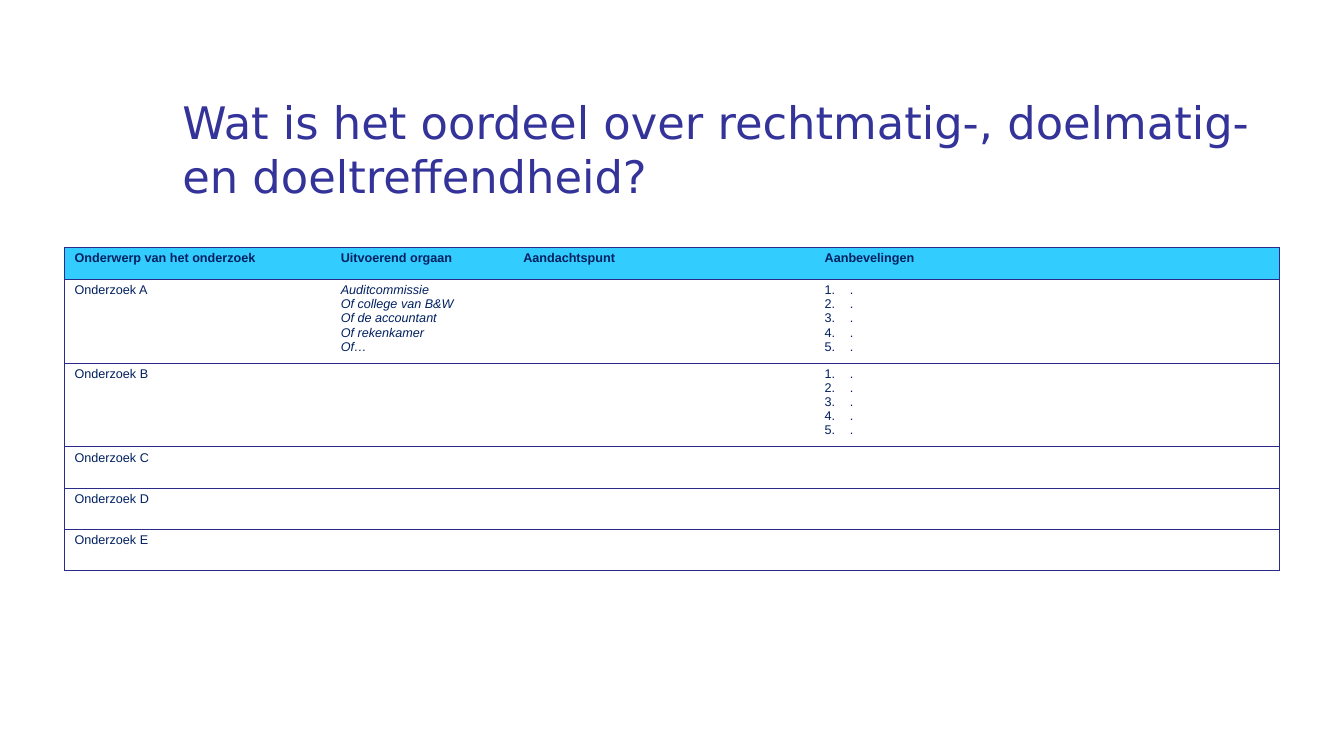
from lxml import etree
from pptx import Presentation
from pptx.dml.color import RGBColor
from pptx.enum import text
from pptx.oxml.ns import qn
from pptx.util import Inches, Pt

# Content
QUESTION = "Wat is het oordeel over rechtmatig-, doelmatig- en doeltreffendheid?"
HEADINGS = ["Onderwerp van het onderzoek", "Uitvoerend orgaan", "Aandachtspunt", "Aanbevelingen"]
BODIES = ["Auditcommissie", "Of college van B&W", "Of de accountant", "Of rekenkamer", "Of…"]
ADVICE = ["."] * 5
STUDIES = [
    (["Onderzoek A"], BODIES, [], ADVICE),
    (["Onderzoek B"], [], [], ADVICE),
    (["Onderzoek C"], [], [], []),
    (["Onderzoek D"], [], [], []),
    (["Onderzoek E"], [], [], []),
]
COLUMN_WIDTHS = [2.64, 1.81, 2.99, 4.51]
COLUMN_WIDTHS[-1] = round(12.05 - sum(COLUMN_WIDTHS[:-1]), 2)
ROW_HEIGHTS = [0.32, 0.8, 0.8] + [0.41] * 3
BODY_COLUMN, ADVICE_COLUMN = 1, 3
COLORS = {"title": "333399", "text": "002060", "header": "33CCFF", "line": "2A2A89"}


def color(name):
    return RGBColor.from_string(COLORS[name])


def set_border(cell, side, visible):
    line = etree.SubElement(cell._tc.get_or_add_tcPr(), qn(f"a:ln{side}"), w=str(Pt(0.75)))
    if visible:
        fill = etree.SubElement(line, qn("a:solidFill"))
        etree.SubElement(fill, qn("a:srgbClr"), val=COLORS["line"])
    else:
        etree.SubElement(line, qn("a:noFill"))


def number(paragraph):
    properties = paragraph._p.get_or_add_pPr()
    properties.set("marL", str(Inches(0.25)))
    properties.set("indent", str(-Inches(0.25)))
    etree.SubElement(properties, qn("a:buFont"), typeface="+mj-lt")
    etree.SubElement(properties, qn("a:buAutoNum"), type="arabicPeriod")


def style(font, name, size, tint):
    font.name, font.size = name, Pt(size)
    font.color.rgb = color(tint)


presentation = Presentation()
presentation.slide_width, presentation.slide_height = Inches(13.33), Inches(7.5)
slide = presentation.slides.add_slide(presentation.slide_layouts[6])

# Title
title = slide.shapes.add_textbox(Inches(1.71), Inches(0.85), Inches(11.16), Inches(1.25)).text_frame
title.word_wrap = True
title.vertical_anchor = text.MSO_ANCHOR.MIDDLE
title.text = QUESTION
style(title.paragraphs[0].font, "DejaVu Sans", 32, "title")

# Table of studies
rows = [[[heading] for heading in HEADINGS], *STUDIES]
studies = slide.shapes.add_table(
    len(rows), len(HEADINGS), Inches(0.64), Inches(2.45),
    Inches(sum(COLUMN_WIDTHS)), Inches(sum(ROW_HEIGHTS))).table
studies.first_row = studies.horz_banding = False
for column, width in zip(studies.columns, COLUMN_WIDTHS):
    column.width = Inches(width)
for row, height in zip(studies.rows, ROW_HEIGHTS):
    row.height = Inches(height)

for r, row in enumerate(rows):
    for c, lines in enumerate(row):
        cell = studies.cell(r, c)
        cell.margin_top = cell.margin_bottom = Inches(0.04)

        # Outer frame and row lines, without inner column lines
        for side, visible in (("L", c == 0), ("R", c == len(HEADINGS) - 1), ("T", True), ("B", True)):
            set_border(cell, side, visible)
        if r == 0:
            cell.fill.solid()
            cell.fill.fore_color.rgb = color("header")
        else:
            cell.fill.background()

        # Cell text
        cell.text = "\n".join(lines)
        for paragraph in cell.text_frame.paragraphs:
            if r > 0 and c == ADVICE_COLUMN and lines:
                number(paragraph)
            style(paragraph.font, "Arial", 9, "text")
            paragraph.font.bold = r == 0
            paragraph.font.italic = r > 0 and c == BODY_COLUMN

presentation.save("out.pptx")
